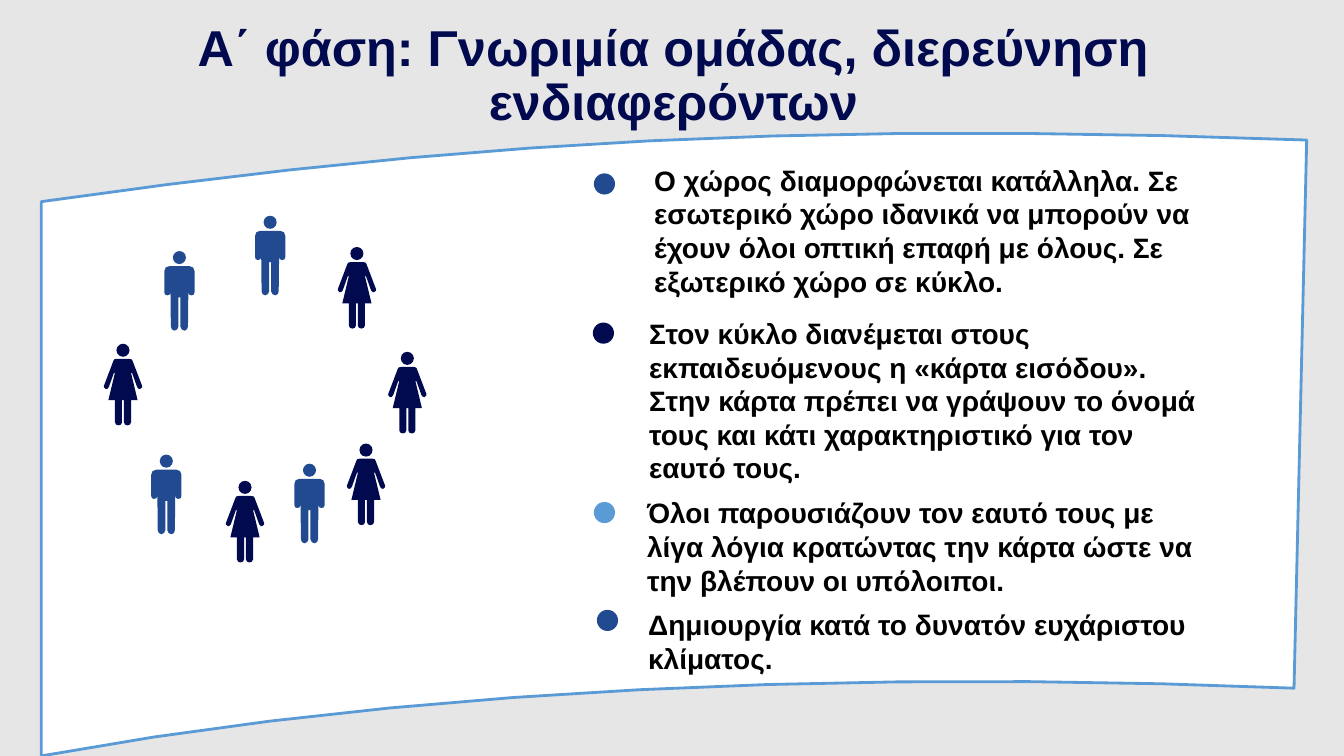
import math

import pptx
import pptx.util
from pptx.dml.color import RGBColor
from pptx.enum.shapes import MSO_SHAPE
from pptx.enum.text import MSO_ANCHOR, MSO_AUTO_SIZE, PP_ALIGN

NAVY = RGBColor(0x01, 0x0A, 0x4F)
BLUE = RGBColor(0x22, 0x4A, 0x90)
SKY = RGBColor(0x5A, 0x9B, 0xD5)
WHITE = RGBColor(0xFF, 0xFF, 0xFF)
BLACK = RGBColor(0, 0, 0)
GREY = RGBColor(0xE7, 0xE6, 0xE6)

SLIDE_WIDTH, SLIDE_HEIGHT = 13.33, 7.5
DOT_SIZE = 0.21
PANEL_CURVE_STEPS = 10
BODY_CURVE_STEPS = 2
HEAD_SIDES = 12
HEAD_RADIUS = 6.5

# Right half of each body, in hundredths of an inch from the top of the head.
# Two numbers are a corner, six are a cubic curve.
MAN = [(10, 15), (13, 15, 15, 17, 15, 20), (15, 41),
       (15, 43, 14, 44, 12, 44), (10, 44, 9, 43, 9, 41), (9, 28),
       (8.5, 75), (8.5, 77, 7, 79, 5, 79), (3, 79, 1, 77, 1, 75), (1, 46)]
WOMAN = [(6, 15), (9, 16, 9, 15, 9.5, 17), (19, 42),
         (19, 43, 19, 44, 17, 45), (16, 45, 15, 45, 14, 43), (9, 29), (8, 29),
         (14.5, 56), (8, 56), (8, 78), (8, 80, 6, 81, 4.5, 81),
         (2.5, 81, 1, 80, 1, 78), (1, 56)]

# Column and row of each head on a 100 by 100 grid over the circle's box.
MEN = [(42, 3.5), (19.5, 12.25), (51.75, 65), (16.25, 62.75)]
WOMEN = [(5.5, 35.25), (35.75, 69.25), (63.5, 11.25), (65.75, 60), (76, 37.25)]

# Colour, dot offset, text offset, text size and wording.
STEPS = [
    (BLUE, (0.01, 0.15), (0.51, 0), (5.93, 1.45),
     "Ο χώρος διαμορφώνεται κατάλληλα. Σε εσωτερικό χώρο ιδανικά να μπορούν "
     "να έχουν όλοι οπτική επαφή με όλους. Σε εξωτερικό χώρο σε κύκλο."),
    (NAVY, (0, 1.63), (0.46, 1.52), (5.64, 1.78),
     "Στον κύκλο διανέμεται στους εκπαιδευόμενους η «κάρτα εισόδου». Στην "
     "κάρτα πρέπει να γράψουν το όνομά τους και κάτι χαρακτηριστικό για τον "
     "εαυτό τους."),
    (SKY, (0.01, 3.41), (0.44, 3.3), (5.64, 1.11),
     "Όλοι παρουσιάζουν τον εαυτό τους με λίγα λόγια κρατώντας την κάρτα "
     "ώστε να την βλέπουν οι υπόλοιποι."),
    (BLUE, (0.04, 4.48), (0.45, 4.41), (5.64, 0.77),
     "Δημιουργία κατά το δυνατόν ευχάριστου κλίματος."),
]


def inches(*lengths):
    return [pptx.util.Inches(length) for length in lengths]


def trace(outline, curve_steps):
    """Turn corners and cubic curves into a list of points."""
    points = []
    for part in outline:
        if len(part) == 2:
            points.append(part)
            continue
        ends = [points[-1], part[:2], part[2:4], part[4:]]
        for step in range(1, curve_steps + 1):
            t = step / curve_steps
            weights = [math.comb(3, i) * t**i * (1 - t)**(3 - i) for i in range(4)]
            points.append(tuple(sum(w * end[axis] for w, end in zip(weights, ends))
                                for axis in (0, 1)))
    return points


def add_outline(slide, contours, fill):
    """Draw closed contours, given in inches on the slide, as one shape."""
    first, *others = [[inches(*point) for point in contour] for contour in contours]
    builder = slide.shapes.build_freeform(*first[0])
    builder.add_line_segments(first[1:])
    for contour in others:
        builder.move_to(*contour[0])
        builder.add_line_segments(contour[1:])
    shape = builder.convert_to_shape()
    shape.shadow.inherit = False
    shape.fill.solid()
    shape.fill.fore_color.rgb = fill
    shape.line.fill.background()
    return shape


def add_panel(slide, left, top, width, height):
    def at(*shares):
        return tuple(left + share * width if i % 2 == 0 else top + share * height
                     for i, share in enumerate(shares))

    outline = [at(0, 0.1), at(0.34, 0, 0.61, -0.03, 1, 0), at(0.99, 0.89),
               at(0.64, 0.86, 0.29, 0.89, 0, 1)]
    panel = add_outline(slide, [trace(outline, PANEL_CURVE_STEPS)], WHITE)
    panel.line.color.rgb = SKY
    panel.line.width = pptx.util.Pt(2)


def add_person(slide, center, top, half_body, color):
    half = trace(half_body, BODY_CURVE_STEPS)
    body = half + [(-x, y) for x, y in reversed(half)]
    turns = [math.tau * i / HEAD_SIDES for i in range(HEAD_SIDES)]
    head = [(HEAD_RADIUS * math.cos(turn), HEAD_RADIUS * (1 + math.sin(turn)))
            for turn in turns]
    add_outline(slide, [[(center + x / 100, top + y / 100) for x, y in contour]
                        for contour in (body, head)], color)


def add_people_circle(slide, left, top, width, height):
    for places, half_body, color in ((MEN, MAN, BLUE), (WOMEN, WOMAN, NAVY)):
        for column, row in places:
            add_person(slide, left + column * width / 100,
                       top + row * height / 100, half_body, color)


def add_text(slide, box, wording, size, color):
    """Add a wrapped bold text box and return its frame and paragraph."""
    frame = slide.shapes.add_textbox(*inches(*box)).text_frame
    frame.word_wrap = True
    paragraph = frame.paragraphs[0]
    paragraph.text = wording
    paragraph.font.name = "Arial"
    paragraph.font.size = pptx.util.Pt(size)
    paragraph.font.bold = True
    paragraph.font.color.rgb = color
    return frame, paragraph


def add_title(slide, *box):
    frame, paragraph = add_text(
        slide, box, "Α΄ φάση: Γνωριμία ομάδας, διερεύνηση ενδιαφερόντων", 36, NAVY)
    frame.vertical_anchor = MSO_ANCHOR.MIDDLE
    paragraph.alignment = PP_ALIGN.CENTER
    paragraph.line_spacing = 0.9
    paragraph.space_before = pptx.util.Pt(10)


def add_steps(slide, left, top):
    for color, (dot_x, dot_y), (text_x, text_y), size, wording in STEPS:
        dot = slide.shapes.add_shape(
            MSO_SHAPE.OVAL,
            *inches(left + dot_x, top + dot_y, DOT_SIZE, DOT_SIZE))
        dot.shadow.inherit = False
        dot.fill.solid()
        dot.fill.fore_color.rgb = color
        dot.line.fill.background()
        frame, _ = add_text(slide, (left + text_x, top + text_y, *size),
                            wording, 20, BLACK)
        frame.auto_size = MSO_AUTO_SIZE.SHAPE_TO_FIT_TEXT


def main():
    deck = pptx.Presentation()
    deck.slide_width, deck.slide_height = inches(SLIDE_WIDTH, SLIDE_HEIGHT)
    slide = deck.slides.add_slide(deck.slide_layouts[6])
    slide.background.fill.solid()
    slide.background.fill.fore_color.rgb = GREY
    add_panel(slide, 0.41, 1.39, 12.55, 6.11)
    add_title(slide, 0.35, 0.37, 12.66, 0.79)
    add_steps(slide, 5.88, 1.57)
    add_people_circle(slide, 1, 2, 4, 4)
    deck.save("out.pptx")


if __name__ == "__main__":
    main()
